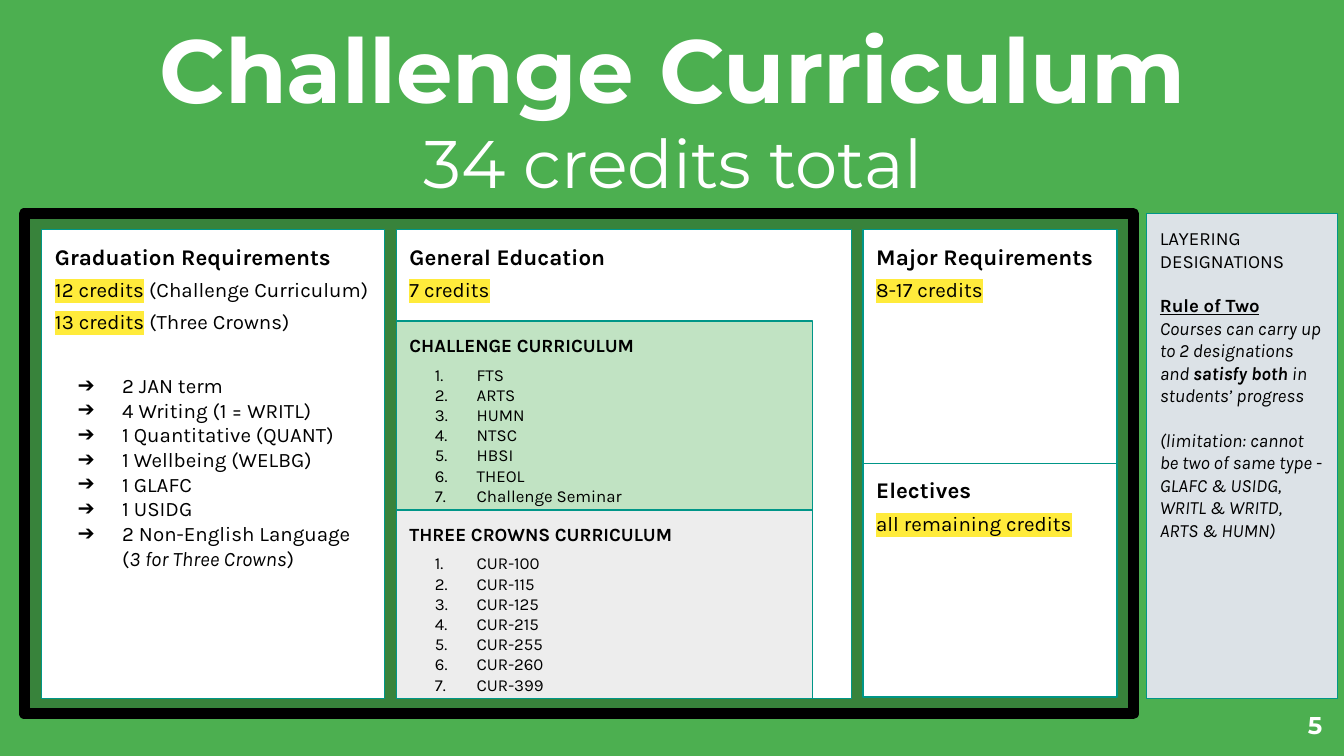
from copy import deepcopy
from dataclasses import dataclass

from lxml.etree import SubElement
from pptx import Presentation
from pptx.dml.color import RGBColor
from pptx.dml.fill import FillFormat
from pptx.enum.shapes import MSO_SHAPE
from pptx.enum.text import MSO_ANCHOR, PP_ALIGN
from pptx.oxml.ns import qn
from pptx.slide import Slide
from pptx.text.text import TextFrame
from pptx.util import Cm, Pt

BLACK, WHITE, GREEN, TEAL, YELLOW = "000000", "FFFFFF", "4CAF50", "009688", "FFEB3B"
ARROW, NUMBER = "➔", "1."
INSET = 0.25


@dataclass(frozen=True)
class Span:
    text: str
    bold: bool = False
    italic: bool = False
    underline: bool = False
    highlight: bool = False


@dataclass(frozen=True)
class Line:
    spans: tuple[Span, ...]
    size: float
    before: float = 0
    bullet: str = ""
    font: str = "Karla"
    color: str = BLACK
    align: PP_ALIGN = PP_ALIGN.LEFT


@dataclass(frozen=True)
class Box:
    left: float
    top: float
    width: float
    height: float


@dataclass(frozen=True)
class Panel:
    box: Box
    lines: tuple[Line, ...] = ()
    fill: str = WHITE
    opacity: int = 100
    border: str = TEAL
    border_width: float = 0.75


def rgb(color: str) -> RGBColor:
    return RGBColor.from_string(color)


def paint(fill: FillFormat, color: str) -> None:
    fill.solid()
    fill.fore_color.rgb = rgb(color)


def style_run(run, span: Span, line: Line) -> None:
    font = run.font
    font.name, font.size = line.font, Pt(line.size)
    font.bold, font.italic, font.underline = span.bold, span.italic, span.underline
    paint(font.fill, line.color)
    if span.highlight:
        properties = run._r.get_or_add_rPr()
        highlight = SubElement(properties, qn("a:highlight"))
        SubElement(highlight, qn("a:srgbClr"), val=YELLOW)
        properties.find(qn("a:solidFill")).addnext(highlight)


def add_bullet(paragraph, bullet: str) -> None:
    properties = paragraph._p.get_or_add_pPr()
    hanging = Cm(0.84) if bullet == ARROW else Cm(0.79)
    properties.set("marL", str(Cm(1.27)))
    properties.set("indent", str(-hanging))
    SubElement(SubElement(properties, qn("a:buClr")), qn("a:srgbClr"), val=BLACK)
    SubElement(properties, qn("a:buFont"), typeface="Karla")
    if bullet == NUMBER:
        SubElement(properties, qn("a:buAutoNum"), type="arabicPeriod")
    else:
        SubElement(properties, qn("a:buChar"), char=bullet)


def write_lines(frame: TextFrame, lines: tuple[Line, ...], anchor: MSO_ANCHOR = MSO_ANCHOR.TOP) -> None:
    frame.word_wrap = True
    frame.vertical_anchor = anchor
    frame.margin_left = frame.margin_right = frame.margin_top = frame.margin_bottom = Cm(INSET)
    for index, line in enumerate(lines):
        paragraph = frame.add_paragraph() if index else frame.paragraphs[0]
        paragraph.alignment = line.align
        paragraph.space_before = Pt(line.before)
        if line.bullet:
            add_bullet(paragraph, line.bullet)
        first, *others = line.spans
        paragraph.text = first.text
        for run in paragraph.runs:
            style_run(run, first, line)
        for line_break in paragraph._p.findall(qn("a:br")):
            line_break.insert(0, deepcopy(paragraph.runs[0]._r.rPr))
        for span in others:
            run = paragraph.add_run()
            run.text = span.text
            style_run(run, span, line)


def draw_panel(slide: Slide, panel: Panel) -> None:
    box = panel.box
    shape = slide.shapes.add_shape(
        MSO_SHAPE.RECTANGLE, Cm(box.left), Cm(box.top), Cm(box.width), Cm(box.height))
    shape.shadow.inherit = False
    paint(shape.fill, panel.fill)
    if panel.opacity < 100:
        tint = shape._element.spPr.find(qn("a:solidFill"))[0]
        SubElement(tint, qn("a:alpha"), val=str(panel.opacity * 1000))
    paint(shape.line.fill, panel.border)
    shape.line.width = Pt(panel.border_width)
    if panel.lines:
        write_lines(shape.text_frame, panel.lines)


def draw_text(slide: Slide, box: Box, lines: tuple[Line, ...], anchor: MSO_ANCHOR) -> None:
    textbox = slide.shapes.add_textbox(Cm(box.left), Cm(box.top), Cm(box.width), Cm(box.height))
    write_lines(textbox.text_frame, lines, anchor)


def heading(text: str, size: float = 12) -> Line:
    return Line((Span(text, bold=True),), size)


def credit_line(amount: str, note: str = "") -> Line:
    spans = (Span(amount, highlight=True),) + ((Span(note),) if note else ())
    return Line(spans, 11, before=4)


def course_list(title: str, courses: list[str]) -> tuple[Line, ...]:
    items = (Line((Span(course),), 9, 0 if i else 4, NUMBER) for i, course in enumerate(courses))
    return (heading(title, 10), *items)


def white_line(text: str, size: float, bold: bool, align: PP_ALIGN) -> Line:
    return Line((Span(text, bold=bold),), size, font="Montserrat", color=WHITE, align=align)


def main() -> None:
    """Build the Challenge Curriculum slide."""
    deck = Presentation()
    deck.slide_width, deck.slide_height = Cm(25.4), Cm(14.29)
    slide = deck.slides.add_slide(deck.slide_layouts[6])
    paint(slide.background.fill, GREEN)

    requirements = ["2 JAN term", "4 Writing (1 = WRITL)", "1 Quantitative (QUANT)",
                    "1 Wellbeing (WELBG)", "1 GLAFC", "1 USIDG"]
    graduation = (
        heading("Graduation Requirements"),
        credit_line("12 credits", " (Challenge Curriculum)"),
        credit_line("13 credits", " (Three Crowns)"),
        *(Line((Span(text),), 11, 0 if i else 21, ARROW) for i, text in enumerate(requirements)),
        Line((Span("2 Non-English Language\n("), Span("3 for Three Crowns", italic=True), Span(")")),
             11, bullet=ARROW),
    )
    layering = (
        Line((Span("LAYERING DESIGNATIONS"),), 10),
        Line((Span("Rule of Two", bold=True, underline=True),), 10, before=12),
        Line((Span("Courses can carry up to 2 designations and ", italic=True),
              Span("satisfy both", bold=True, italic=True),
              Span(" in students’ progress", italic=True)), 10),
        Line((Span("(limitation: cannot be two of same type - GLAFC & USIDG, \nWRITL & WRITD, \nARTS & HUMN)",
                   italic=True),), 10, before=12),
    )
    challenge = course_list("CHALLENGE CURRICULUM",
                            ["FTS", "ARTS", "HUMN", "NTSC", "HBSI", "THEOL", "Challenge Seminar"])
    crowns = course_list("THREE CROWNS CURRICULUM",
                         [f"CUR-{code}" for code in (100, 115, 125, 215, 255, 260, 399)])

    panels = (
        Panel(Box(0.46, 4.04, 20.96, 9.45), fill=BLACK, opacity=25, border=BLACK, border_width=6),
        Panel(Box(7.49, 4.34, 8.61, 8.86), (heading("General Education"), credit_line("7 credits"))),
        Panel(Box(16.31, 4.34, 4.8, 4.42), (heading("Major Requirements"), credit_line("8-17 credits"))),
        Panel(Box(16.31, 8.76, 4.8, 4.42), (heading("Electives"), credit_line("all remaining credits"))),
        Panel(Box(0.79, 4.34, 6.48, 8.86), graduation),
        Panel(Box(7.49, 6.07, 7.87, 3.57), challenge, GREEN, 34),
        Panel(Box(7.49, 9.64, 7.87, 3.56), crowns, BLACK, 7),
        Panel(Box(21.67, 4.04, 3.61, 9.16), layering, "DCE2E7"),
    )
    for panel in panels:
        draw_panel(slide, panel)

    title = (white_line("Challenge Curriculum", 48, True, PP_ALIGN.CENTER),
             white_line("34 credits total", 36, False, PP_ALIGN.CENTER))
    draw_text(slide, Box(0.74, 0, 23.95, 4.09), title, MSO_ANCHOR.MIDDLE)
    page_number = (white_line("5", 13, True, PP_ALIGN.RIGHT),)
    draw_text(slide, Box(23.72, 13.18, 1.52, 1.09), page_number, MSO_ANCHOR.TOP)
    deck.save("out.pptx")


if __name__ == "__main__":
    main()
